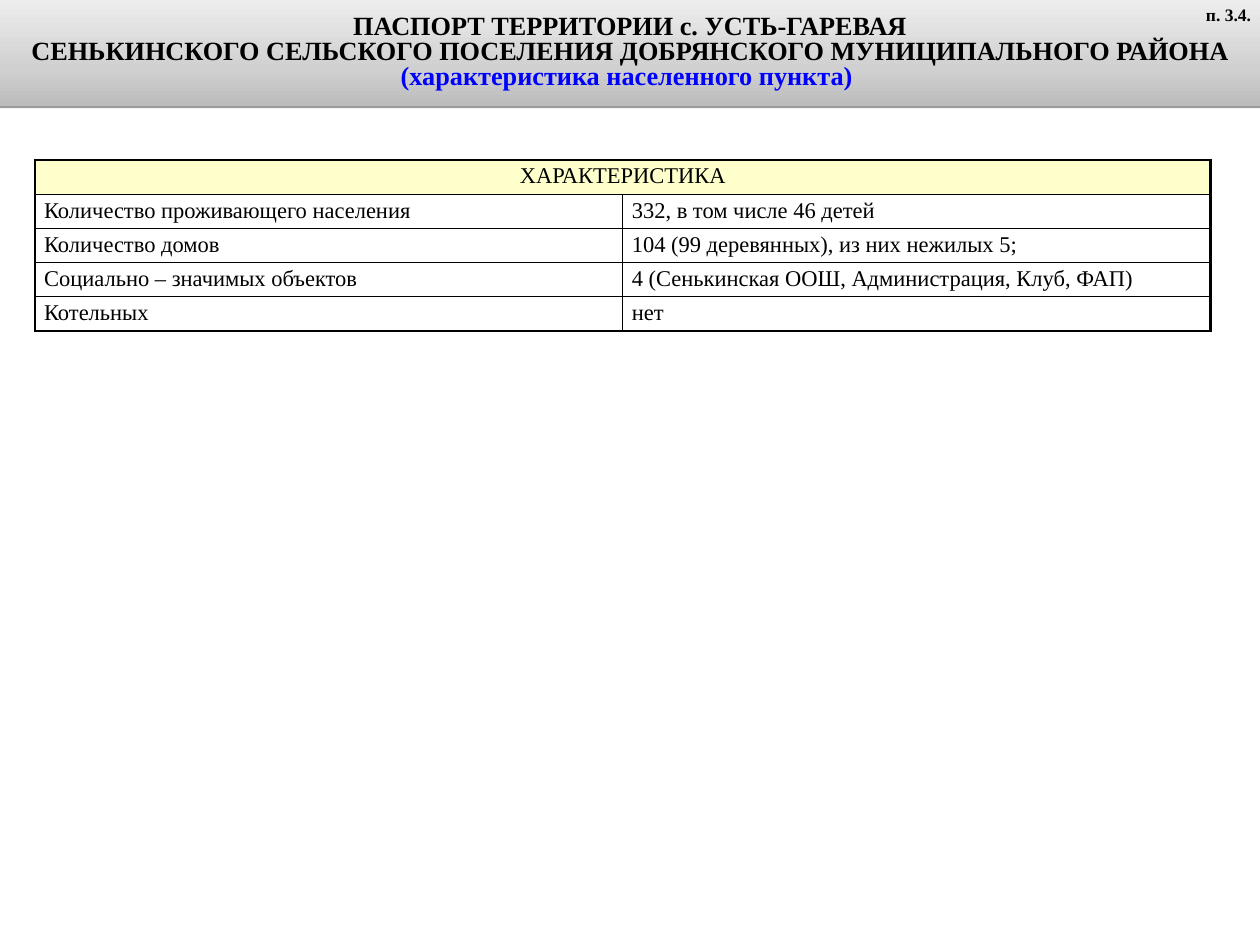
from dataclasses import dataclass
from typing import Optional

import lxml.etree
import pptx
import pptx.dml.color
import pptx.enum.text
import pptx.oxml
import pptx.oxml.ns
import pptx.util

ALIGN = pptx.enum.text.PP_ALIGN
ANCHOR = pptx.enum.text.MSO_ANCHOR
NAMESPACE = pptx.oxml.ns.nsdecls("a")


@dataclass(frozen=True)
class Theme:
    font: str = "Times New Roman"
    ink: str = "000000"
    accent: str = "0000FF"
    heading_fill: str = "FFFFCC"
    band_stops: tuple = ((0, "BCBCBC"), (35, "D0D0D0"), (100, "EDEDED"))
    title_size: float = 21
    table_size: float = 18
    reference_size: float = 14
    outer_border: float = 2.25
    inner_border: float = 1


@dataclass(frozen=True)
class Grid:
    width: float = 14
    height: float = 10.5
    band_height: float = 1.18
    table_left: float = 0.39
    table_top: float = 1.78
    column_width: float = 6.53
    row_height: float = 0.38
    cell_margin: float = 0.04
    reference_width: float = 0.79
    reference_height: float = 0.33


@dataclass(frozen=True)
class Fact:
    label: str
    value: str


THEME = Theme()
GRID = Grid()
HEADING = "ХАРАКТЕРИСТИКА"
TITLE_LINES = (
    ("ПАСПОРТ ТЕРРИТОРИИ с. УСТЬ-ГАРЕВАЯ", THEME.ink),
    ("СЕНЬКИНСКОГО СЕЛЬСКОГО ПОСЕЛЕНИЯ ДОБРЯНСКОГО МУНИЦИПАЛЬНОГО РАЙОНА", THEME.ink),
    ("(характеристика населенного пункта) ", THEME.accent),
)
FACTS = (
    Fact("Количество проживающего населения", "332, в том числе 46 детей"),
    Fact("Количество домов", "104 (99 деревянных), из них нежилых 5;"),
    Fact("Социально – значимых объектов", "4 (Сенькинская ООШ, Администрация, Клуб, ФАП)"),
    Fact("Котельных", "нет"),
)


def rgb(color: str) -> pptx.dml.color.RGBColor:
    return pptx.dml.color.RGBColor.from_string(color)


def style(paragraph, size: float, color: str, align: ALIGN, bold: bool = False) -> None:
    paragraph.alignment = align
    for run in paragraph.runs:
        run.font.name = THEME.font
        run.font.size = pptx.util.Pt(size)
        run.font.bold = bold
        run.font.color.rgb = rgb(color)


def paint_band(band) -> None:
    stops = "".join(
        f'<a:gs pos="{share * 1000}"><a:srgbClr val="{color}"/></a:gs>'
        for share, color in THEME.band_stops
    )
    band.line.fill.background()
    outline = band.line._get_or_add_ln()
    outline.addprevious(pptx.oxml.parse_xml(
        f'<a:gradFill {NAMESPACE} rotWithShape="1"><a:gsLst>{stops}</a:gsLst>'
        '<a:lin ang="16200000" scaled="0"/></a:gradFill>'
    ))
    outline.addnext(pptx.oxml.parse_xml(
        f'<a:effectLst {NAMESPACE}><a:outerShdw blurRad="0" dist="{pptx.util.Pt(1.6)}" '
        f'dir="5400000" rotWithShape="0"><a:srgbClr val="{THEME.ink}">'
        '<a:alpha val="38000"/></a:srgbClr></a:outerShdw></a:effectLst>'
    ))


def draw_title(slide) -> None:
    title = slide.shapes.title
    title.left = title.top = 0
    title.width = pptx.util.Inches(GRID.width)
    title.height = pptx.util.Inches(GRID.band_height)
    paint_band(title)
    frame = title.text_frame
    frame.text = "\n".join(line for line, _ in TITLE_LINES)
    frame.word_wrap = True
    frame.auto_size = pptx.enum.text.MSO_AUTO_SIZE.NONE
    frame.vertical_anchor = ANCHOR.MIDDLE
    for paragraph, (_, color) in zip(frame.paragraphs, TITLE_LINES):
        paragraph.line_spacing = 0.8
        style(paragraph, THEME.title_size, color, ALIGN.CENTER, bold=True)


def set_borders(cell, outer_sides: str) -> None:
    properties = cell._tc.get_or_add_tcPr()
    for position, side in enumerate("LRTB"):
        weight = THEME.outer_border if side in outer_sides else THEME.inner_border
        properties.insert(position, pptx.oxml.parse_xml(
            f'<a:ln{side} {NAMESPACE} w="{pptx.util.Pt(weight)}"><a:solidFill>'
            f'<a:srgbClr val="{THEME.ink}"/></a:solidFill></a:ln{side}>'
        ))


def fill_cell(cell, text: str, outer_sides: str, align: ALIGN = ALIGN.LEFT,
              fill: Optional[str] = None) -> None:
    cell.text = text
    cell.margin_top = cell.margin_bottom = pptx.util.Inches(GRID.cell_margin)
    style(cell.text_frame.paragraphs[0], THEME.table_size, THEME.ink, align)
    if fill:
        cell.fill.solid()
        cell.fill.fore_color.rgb = rgb(fill)
    else:
        cell.fill.background()
    set_borders(cell, outer_sides)


def draw_facts(slide) -> None:
    row_count = len(FACTS) + 1
    facts = slide.shapes.add_table(
        row_count, 2,
        pptx.util.Inches(GRID.table_left), pptx.util.Inches(GRID.table_top),
        pptx.util.Inches(2 * GRID.column_width),
        pptx.util.Inches(row_count * GRID.row_height),
    ).table
    facts.horz_banding = False
    heading = facts.cell(0, 0)
    heading.merge(facts.cell(0, 1))
    fill_cell(heading, HEADING, "LTR", ALIGN.CENTER, THEME.heading_fill)
    for row, fact in enumerate(FACTS, start=1):
        bottom = "B" if row == len(FACTS) else ""
        fill_cell(facts.cell(row, 0), fact.label, "L" + bottom)
        fill_cell(facts.cell(row, 1), fact.value, "R" + bottom)


def draw_reference(slide) -> None:
    reference = slide.shapes.add_textbox(
        pptx.util.Inches(GRID.width - GRID.reference_width), 0,
        pptx.util.Inches(GRID.reference_width), pptx.util.Inches(GRID.reference_height),
    )
    frame = reference.text_frame
    frame.text = "п. 3.4."
    frame.word_wrap = True
    frame.auto_size = pptx.enum.text.MSO_AUTO_SIZE.SHAPE_TO_FIT_TEXT
    style(frame.paragraphs[0], THEME.reference_size, THEME.ink, ALIGN.RIGHT, bold=True)


def main() -> None:
    presentation = pptx.Presentation()
    presentation.slide_width = pptx.util.Inches(GRID.width)
    presentation.slide_height = pptx.util.Inches(GRID.height)
    slide = presentation.slides.add_slide(presentation.slide_layouts.get_by_name("Title Only"))
    draw_title(slide)
    draw_facts(slide)
    draw_reference(slide)
    presentation.save("out.pptx")


if __name__ == "__main__":
    main()
